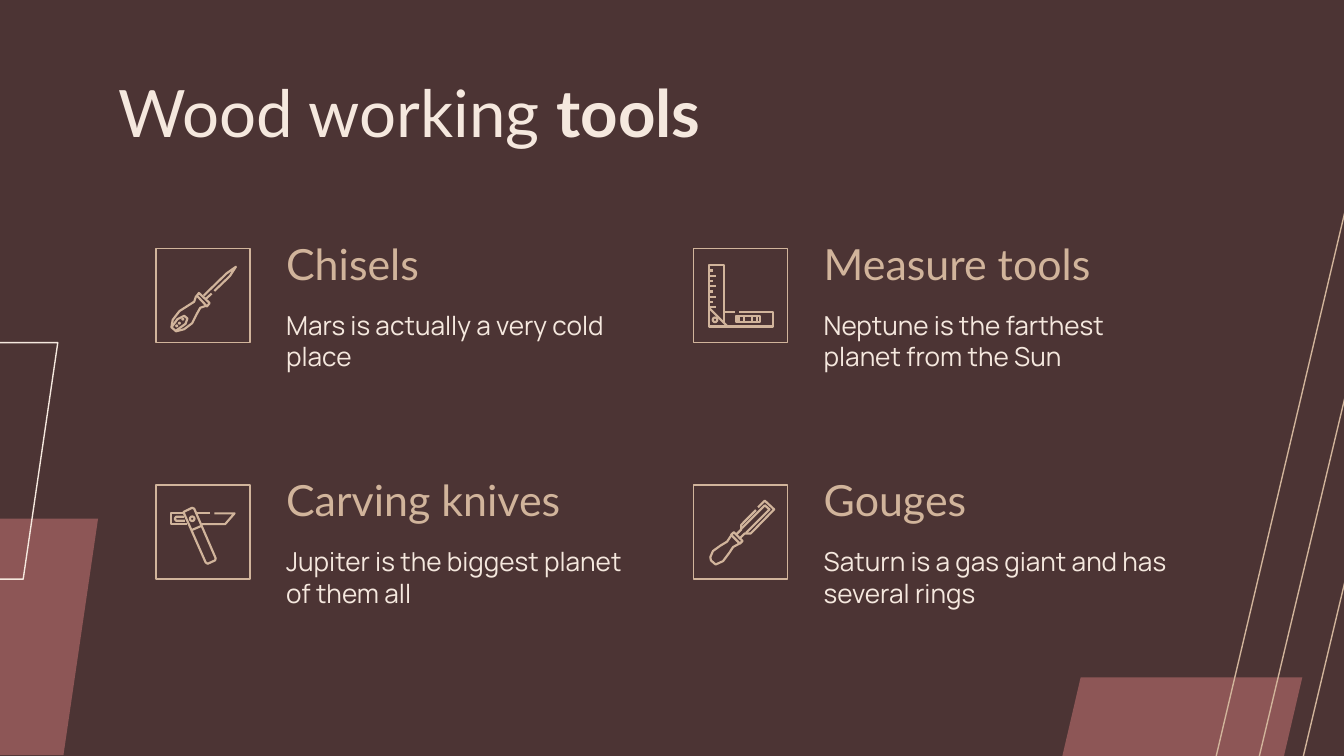
from math import cos, pi, sin

from lxml import etree
from pptx import Presentation
from pptx.dml.color import RGBColor
from pptx.enum.shapes import MSO_CONNECTOR, MSO_SHAPE
from pptx.enum.text import MSO_ANCHOR, MSO_AUTO_SIZE, PP_ALIGN
from pptx.oxml.ns import qn
from pptx.util import Inches, Pt

STRAIGHT = MSO_CONNECTOR.STRAIGHT
RECTANGLE, PARALLELOGRAM = MSO_SHAPE.RECTANGLE, MSO_SHAPE.PARALLELOGRAM
TOP, BOTTOM = MSO_ANCHOR.TOP, MSO_ANCHOR.BOTTOM
LEFT, NO_FIT = PP_ALIGN.LEFT, MSO_AUTO_SIZE.NONE

BROWN = RGBColor(0x4C, 0x34, 0x34)
ROSE = RGBColor(0x8D, 0x56, 0x56)
CREAM = RGBColor(0xF5, 0xE8, 0xDE)
TAN = RGBColor(0xD1, 0xB4, 0x9B)

TITLE_FONT = {"name": "Lato", "size": Pt(35)}
HEADING_FONT = {"name": "Lato", "size": Pt(23)}
BODY_FONT = {"name": "Manrope", "size": Pt(14)}


def ring(x, y, r, n=12):
    return [(x + r * cos(2 * pi * i / n), y + r * sin(2 * pi * i / n))
            for i in range(n)] + [(x + r, y)]


CHISEL = [
    [(32, 33), (40, 40.5), (38, 43), (30.5, 35), (32, 33)],
    [(35.5, 35), (52.5, 18.5), (59.5, 13.5), (55, 20.5), (43.5, 31.5)],
    [(41.5, 33.5), (37, 37.5)],
    [(30, 35), (28.5, 39.5), (23, 43), (17.5, 46.5), (12.5, 53), (11.5, 58.5),
     (15, 61.5), (21, 60), (27, 55.5), (30.5, 48.5), (33, 44), (37.5, 42.5)],
    [(12, 58), (16, 52.5), (21, 50), (23.5, 52), (22, 56), (15, 61)],
    ring(20, 52.5, 0.3), ring(17.5, 55.5, 0.3), ring(15.5, 57.5, 0.3),
]
SQUARE = [
    [(31, 47), (22.5, 47), (22.5, 12.5), (11.5, 12.5), (11.5, 58),
     (59, 58), (59, 47), (34, 47)],
    [(12, 44.5), (25.5, 58)], [(22.5, 47), (22.5, 54.5)],
    ring(16, 53, 1.7),
    [(31.5, 50), (49.5, 50), (49.5, 54.5), (31.5, 54.5), (31.5, 50)],
    *[[(x, 50), (x, 54.5)] for x in (33.5, 37.5, 43.5, 47.5)],
    *[[(11.5, 16.3 + 3.9 * i), (17 if i % 2 else 14.5, 16.3 + 3.9 * i)]
      for i in range(8)],
]
KNIFE = [
    [(20, 21), (11, 21), (11, 29), (23, 29)],
    [(21, 23.5), (15, 23.5), (14, 25), (15, 26.5), (21.5, 26.5)],
    ring(27, 25, 1.7),
    [(20.5, 20), (27, 16.8), (28.5, 17.5), (44.5, 54.5), (44, 56),
     (38.5, 58.5), (37, 57.5), (20.5, 20)],
    [(26.5, 33.5), (33.5, 30.5)],
    [(30, 21), (40.5, 21)],
    [(43.5, 21), (58.5, 21), (51.5, 29), (34, 29)],
]
GOUGE = [
    [(30, 35), (36.5, 41.5), (34.5, 43.5), (28, 37), (30, 35)],
    [(28, 37.5), (25, 42), (20, 45), (14.5, 49), (12.5, 53.5), (13, 56),
     (16.5, 59), (22, 56.5), (26.5, 50.5), (29.5, 46), (34, 43.5)],
    [(32, 36.5), (35.5, 33), (35.5, 29.5), (46.5, 18.5)],
    [(48, 16.5), (53, 11.5), (60, 18), (42.5, 36), (38, 36), (34, 40)],
    [(36, 32), (53, 15), (56.5, 18), (39, 35.5)],
]

TITLE = [("Wood working ", False), ("tools", True)]
TOOLS = [
    ("Chisels", 2.81, "Mars is actually a very cold place", CHISEL),
    ("Measure tools", 2.81, "Neptune is the farthest planet from the Sun", SQUARE),
    ("Carving knives", 3.05, "Jupiter is the biggest planet of them all", KNIFE),
    ("Gouges", 2.81, "Saturn is a gas giant and has several rings", GOUGE),
]
PANELS = [
    ((-0.3, 3.86, 1.03, 1.76), 0.25, ROSE, None),
    ((7.85, 5.04, 1.84, 0.82), 0.233, ROSE, None),
    ((-0.6, 2.55, 1.03, 1.76), 0.25, None, CREAM),
]
DIAGONALS = [
    (10.11, 1.14, 9.02, 5.75),
    (10.4, 1.31, 9.3, 5.92),
    (10.68, 1.5, 9.58, 6.12),
]
GRID_LEFT, GRID_TOP, COL_STEP, ROW_STEP = 1.16, 1.85, 4, 1.76
BOX, TEXT_SHIFT, BODY_SHIFT, BODY_WIDTH = 0.7, 0.87, 0.35, 2.81


def paint(shape, fill=None, line=None, width=0.75):
    shape.shadow.inherit = False
    if fill is None:
        shape.fill.background()
    else:
        shape.fill.solid()
        shape.fill.fore_color.rgb = fill
    if line is None:
        shape.line.fill.background()
    else:
        shape.line.color.rgb = line
        shape.line.width = Pt(width)


def add_shape(s, kind, at, fill=None, line=None):
    shape = s.shapes.add_shape(kind, *map(Inches, at))
    paint(shape, fill, line)
    return shape


def fill_text(sp, runs, font, color, anchor):
    tf = sp.text_frame
    frame = {"word_wrap": True, "auto_size": NO_FIT, "vertical_anchor": anchor}
    for side in ("left", "top", "right", "bottom"):
        frame[f"margin_{side}"] = Inches(0.1)
    for key, value in frame.items():
        setattr(tf, key, value)
    p = tf.paragraphs[0]
    p.alignment = LEFT
    for text, bold in runs:
        r = p.add_run()
        r.text = text
        for key, value in {**font, "bold": bold}.items():
            setattr(r.font, key, value)
        r.font.color.rgb = color


def add_text(s, at, text, font, color, anchor):
    sp = s.shapes.add_textbox(*map(Inches, at))
    fill_text(sp, [(text, False)], font, color, anchor)


def add_icon(s, left, top, strokes):
    scaled = [[(x * 10, y * 10) for x, y in stroke] for stroke in strokes]
    builder = s.shapes.build_freeform(*scaled[0][0], scale=Inches(1) / 1000)
    for i, stroke in enumerate(scaled):
        if i:
            builder.move_to(*stroke[0])
        builder.add_line_segments(stroke[1:], close=stroke[0] == stroke[-1])
    icon = builder.convert_to_shape(Inches(left), Inches(top))
    paint(icon, line=TAN, width=1.15)


def main():
    prs = Presentation()
    prs.slide_width = Inches(10)
    prs.slide_height = prs.slide_width * 9 // 16
    s = prs.slides.add_slide(prs.slide_layouts[5])
    s.background.fill.solid()
    s.background.fill.fore_color.rgb = BROWN

    for at, slant, fill, line in PANELS:
        add_shape(s, PARALLELOGRAM, at, fill, line).adjustments[0] = slant
    for ends in DIAGONALS:
        line = s.shapes.add_connector(STRAIGHT, *map(Inches, ends))
        line.line.color.rgb = TAN
        line.line.width = Pt(0.75)
        etree.SubElement(line._element.spPr, qn("a:effectLst"))

    title = s.shapes.title
    title.left, title.top, title.width, title.height = map(
        Inches, (0.78, 0.44, 8.44, 0.7))
    fill_text(title, TITLE, TITLE_FONT, CREAM, TOP)

    for i, (heading, heading_width, body, icon) in enumerate(TOOLS):
        row, col = divmod(i, 2)
        left = GRID_LEFT + col * COL_STEP
        top = GRID_TOP + row * ROW_STEP
        text_left = left + TEXT_SHIFT
        add_shape(s, RECTANGLE, (left, top, BOX, BOX), line=TAN)
        add_icon(s, left, top, icon)
        add_text(s, (text_left, top, heading_width, 0.4),
                 heading, HEADING_FONT, TAN, BOTTOM)
        add_text(s, (text_left, top + BODY_SHIFT, BODY_WIDTH, 0.6),
                 body, BODY_FONT, CREAM, TOP)

    prs.save("out.pptx")


if __name__ == "__main__":
    main()
